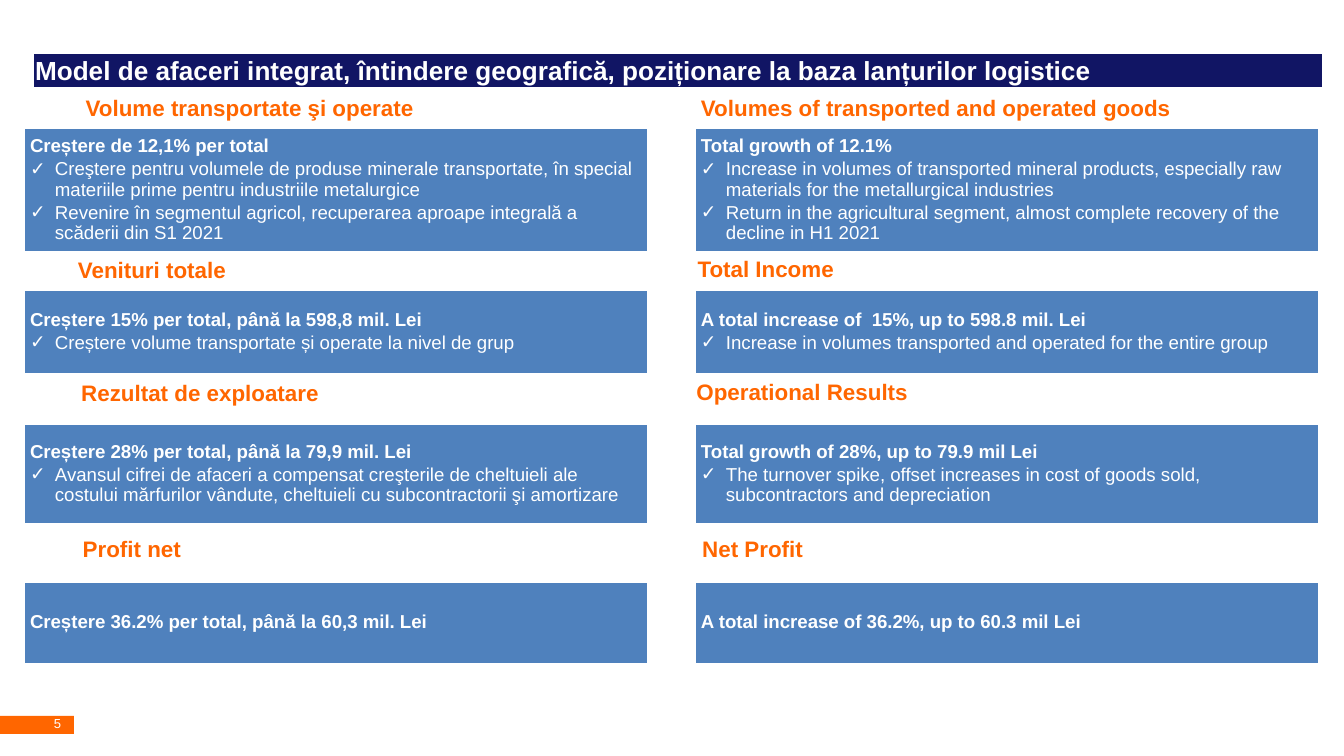
from dataclasses import dataclass

from lxml import etree
from pptx import Presentation
from pptx.dml.color import RGBColor
from pptx.enum.shapes import MSO_SHAPE
from pptx.enum.text import MSO_ANCHOR, MSO_AUTO_SIZE, PP_ALIGN
from pptx.oxml.ns import qn
from pptx.util import Emu, Pt

RECT = MSO_SHAPE.RECTANGLE
TOP, MIDDLE = MSO_ANCHOR.TOP, MSO_ANCHOR.MIDDLE
LEFT, RIGHT = PP_ALIGN.LEFT, PP_ALIGN.RIGHT
NO_FIT = MSO_AUTO_SIZE.NONE


@dataclass(frozen=True)
class Theme:
    font: str = "Arial"
    navy: str = "111564"
    orange: str = "FF6600"
    blue: str = "4F81BD"
    white: str = "FFFFFF"
    title: int = 14
    heading: int = 12
    body: int = 10
    number: int = 7


THEME = Theme()

# Content: each section is (heading, heading frame in px, lead line, bullets)
TITLE = "Model de afaceri integrat, întindere geografică, poziționare la baza lanțurilor logistice"
PAGE = "5"
ROMANIAN = [
    ("Volume transportate şi operate", (38, 93, 392, 32),
     "Creștere de 12,1% per total",
     ["Creştere pentru volumele de produse minerale transportate, în special "
      "materiile prime pentru industriile metalurgice",
      "Revenire în segmentul agricol, recuperarea aproape integrală a scăderii din S1 2021"]),
    ("Venituri totale", (2, 248, 240, 46),
     "Creștere 15% per total, până la 598,8 mil. Lei",
     ["Creștere volume transportate și operate la nivel de grup"]),
    ("Rezultat de exploatare", (61, 373, 274, 43),
     "Creștere 28% per total, până la 79,9 mil. Lei",
     ["Avansul cifrei de afaceri a compensat creşterile de cheltuieli ale costului "
      "mărfurilor vândute, cheltuieli cu subcontractorii şi amortizare"]),
    ("Profit net", (56, 527, 141, 47),
     "Creștere 36.2% per total, până la 60,3 mil. Lei", []),
]
ENGLISH = [
    ("Volumes of transported and operated goods", (672, 93, 515, 32),
     "Total growth of 12.1%",
     ["Increase in volumes of transported mineral products, especially raw "
      "materials for the metallurgical industries",
      "Return in the agricultural segment, almost complete recovery of the decline in H1 2021"]),
    ("Total Income", (677, 254, 173, 32),
     "A total increase of  15%, up to 598.8 mil. Lei",
     ["Increase in volumes transported and operated for the entire group"]),
    ("Operational Results", (671, 377, 253, 32),
     "Total growth of 28%, up to 79.9 mil Lei",
     ["The turnover spike, offset increases in cost of goods sold, "
      "subcontractors and depreciation"]),
    ("Net Profit", (678, 534, 141, 32),
     "A total increase of 36.2%, up to 60.3 mil Lei", []),
]

# Grid, in px
SLIDE_W, SLIDE_H = 1344, 756
COLUMNS = [(23, ROMANIAN), (694, ENGLISH)]
ROWS = [(127, 126), (289, 86), (423, 102), (581, 84)]  # top, height
BOX_W = 626
BULLET_INDENT = 25


def px(n):
    return Emu(round(n * 914400 * 10 / SLIDE_W))


def frame(*box):
    return [px(n) for n in box]


def rgb(color):
    return RGBColor.from_string(color)


def setup(tf, insets, anchor):
    tf.word_wrap = True
    tf.auto_size = NO_FIT
    tf.vertical_anchor = anchor
    tf.margin_left, tf.margin_top, tf.margin_right, tf.margin_bottom = frame(*insets)


def style(p, size, color, bold=False, align=LEFT, spacing=1.0, after=0):
    p.alignment = align
    p.line_spacing = spacing
    p.space_before, p.space_after = Pt(0), Pt(after)
    for r in p.runs:
        r.font.name, r.font.size, r.font.bold = THEME.font, Pt(size), bold
        r.font.color.rgb = rgb(color)


def add_bullet(p):
    pPr = p._p.get_or_add_pPr()
    pPr.set("marL", str(px(BULLET_INDENT)))
    pPr.set("indent", str(-px(BULLET_INDENT)))
    etree.SubElement(pPr, qn("a:buFont")).set("typeface", THEME.font)
    etree.SubElement(pPr, qn("a:buChar")).set("char", "✓")


def add_rect(s, box, fill):
    sp = s.shapes.add_shape(RECT, *frame(*box))
    sp.shadow.inherit = False
    sp.fill.solid()
    sp.fill.fore_color.rgb = rgb(fill)
    sp.line.fill.background()
    return sp


def add_heading(s, text, box):
    tf = s.shapes.add_textbox(*frame(*box)).text_frame
    setup(tf, (16, 5, 16, 5), MIDDLE)
    tf.text = text
    style(tf.paragraphs[0], THEME.heading, THEME.orange, True, RIGHT, 0.9, 2)


def add_panel(s, box, lead, bullets):
    sp = add_rect(s, box, THEME.blue)
    sp.line.color.rgb = rgb(THEME.white)
    sp.line.width = Pt(2)
    tf = sp.text_frame
    setup(tf, (7, 7, 7, 7), MIDDLE)
    tf.text = "\n".join([lead] + bullets)
    for i, p in enumerate(tf.paragraphs):
        style(p, THEME.body, THEME.white, bold=i == 0, spacing=0.9, after=1.5)
        if i:
            add_bullet(p)


def main():
    prs = Presentation()
    prs.slide_width, prs.slide_height = frame(SLIDE_W, SLIDE_H)
    s = prs.slides.add_slide(prs.slide_layouts[5])

    # Title bar
    title = s.shapes.title
    title.left, title.top, title.width, title.height = frame(34, 54, 1288, 33)
    title.fill.solid()
    title.fill.fore_color.rgb = rgb(THEME.navy)
    tf = title.text_frame
    setup(tf, (1, 0, 0, 0), TOP)
    tf.text = TITLE
    style(tf.paragraphs[0], THEME.title, THEME.white, bold=True)

    # Page number tab
    add_rect(s, (0, 716, 74, 18), THEME.orange)
    tf = s.shapes.add_textbox(*frame(48, 715, 26, 20)).text_frame
    setup(tf, (6, 0, 0, 0), TOP)
    tf.text = PAGE
    style(tf.paragraphs[0], THEME.number, THEME.white)

    # Language columns
    for left, sections in COLUMNS:
        for (top, height), (heading, box, lead, bullets) in zip(ROWS, sections):
            add_panel(s, (left, top, BOX_W, height), lead, bullets)
            add_heading(s, heading, box)

    prs.save("out.pptx")


if __name__ == "__main__":
    main()
